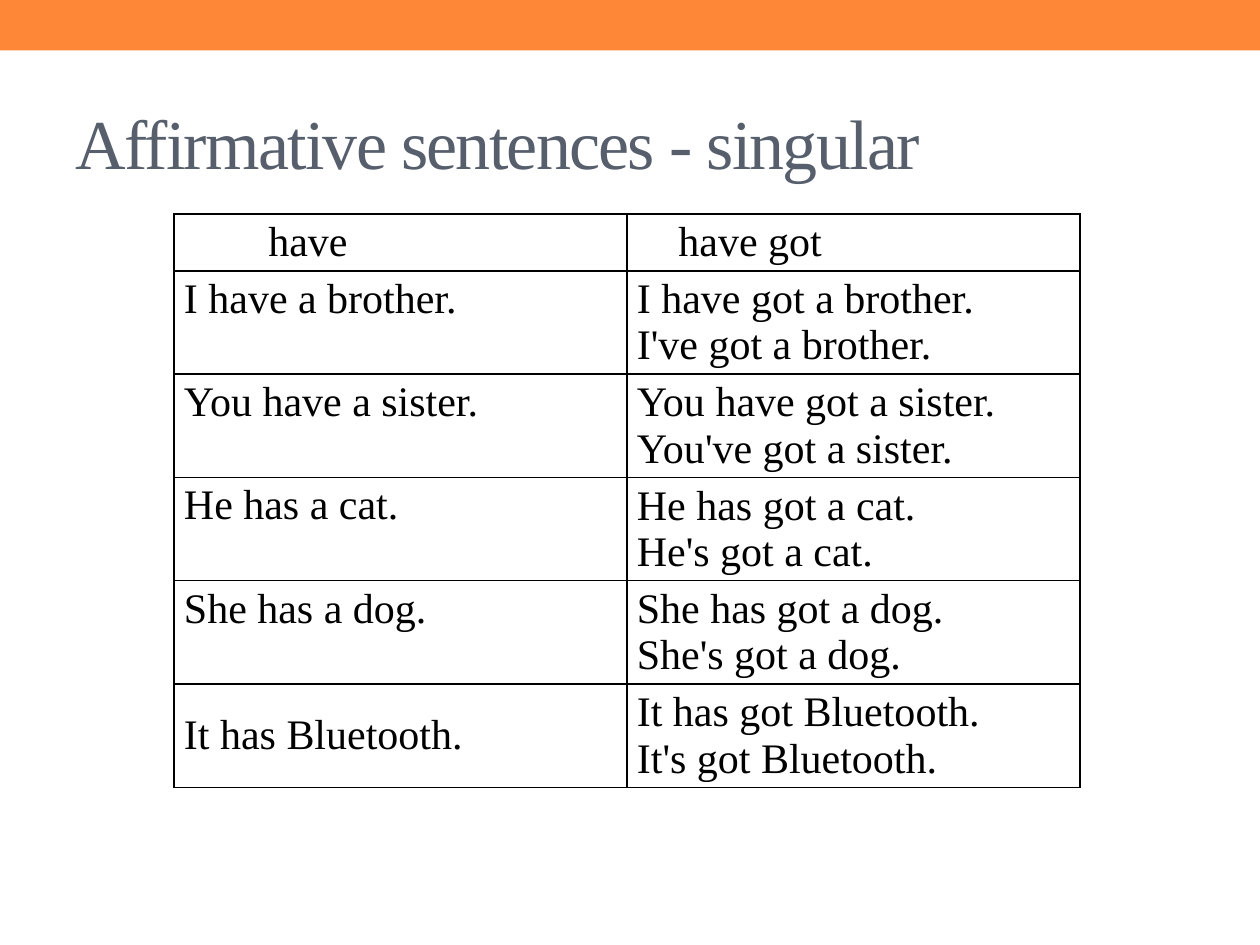
"""Build a slide comparing 'have' and 'have got' in singular affirmative sentences."""
from lxml import etree
from pptx import Presentation
from pptx.dml.color import RGBColor
from pptx.enum.shapes import MSO_SHAPE
from pptx.enum.text import MSO_ANCHOR, PP_ALIGN
from pptx.oxml.ns import qn
from pptx.util import Inches, Pt

RECT = MSO_SHAPE.RECTANGLE
TOP, MIDDLE = MSO_ANCHOR.TOP, MSO_ANCHOR.MIDDLE
LEFT = PP_ALIGN.LEFT
TITLE_ONLY = 5
FONT = "Times New Roman"
COLORS = {"band": "FE8637", "title": "575F6D", "text": "000000", "border": "000000"}
HEADERS = ["have", "have got"]
HEADER_INDENTS = [0.67, 0.33]
SENTENCES = [
    ("I have a brother.", "I have got a brother.\nI've got a brother."),
    ("You have a sister.", "You have got a sister.\nYou've got a sister."),
    ("He has a cat.", "He has got a cat.\nHe's got a cat."),
    ("She has a dog.", "She has got a dog.\nShe's got a dog."),
    ("It has Bluetooth.", "It has got Bluetooth.\nIt's got Bluetooth."),
]


def rgb(name):
    return RGBColor.from_string(COLORS[name])


def format_runs(p, size, color):
    for r in p.runs:
        r.font.name = FONT
        r.font.size = Pt(size)
        r.font.color.rgb = rgb(color)


def add_band(slide):
    sp = slide.shapes.add_shape(RECT, 0, 0, Inches(10), Inches(0.4))
    sp.shadow.inherit = False
    sp.fill.solid()
    sp.fill.fore_color.rgb = rgb("band")
    sp.line.fill.background()


def set_title(slide, text):
    sp = slide.shapes.title
    sp.left, sp.top, sp.width, sp.height = map(Inches, (0.5, 0.58, 9, 1.08))
    tf = sp.text_frame
    tf.vertical_anchor = MIDDLE
    p = tf.paragraphs[0]
    p.text = text
    p.alignment = LEFT
    format_runs(p, 40, "title")
    for r in p.runs:
        r.font._element.set("spc", "-100")


def set_borders(cell):
    tcPr = cell._tc.get_or_add_tcPr()
    for index, side in enumerate(("lnL", "lnR", "lnT", "lnB")):
        ln = etree.Element(qn(f"a:{side}"), w=str(Pt(1)))
        fill = etree.SubElement(ln, qn("a:solidFill"))
        etree.SubElement(fill, qn("a:srgbClr"), val=COLORS["border"])
        tcPr.insert(index, ln)


def fill_cell(cell, text, anchor=MIDDLE, indent=0):
    cell.margin_left = Inches(0.08 + indent)
    cell.margin_right = Inches(0.08)
    cell.margin_top = cell.margin_bottom = Inches(0.04)
    cell.vertical_anchor = anchor
    cell.fill.background()
    set_borders(cell)
    p = cell.text_frame.paragraphs[0]
    p.text = text.replace("\n", "\v")
    format_runs(p, 24, "text")


def add_sentence_table(slide):
    heights = [0.45] + [0.82] * len(SENTENCES)
    frame = slide.shapes.add_table(len(heights), len(HEADERS), Inches(1.38), Inches(1.7),
                                   Inches(7.19), Inches(sum(heights)))
    table = frame.table
    table.first_row = table.horz_banding = False
    for row, height in zip(table.rows, heights):
        row.height = Inches(height)
    for col, (text, indent) in enumerate(zip(HEADERS, HEADER_INDENTS)):
        fill_cell(table.cell(0, col), text, indent=indent)
    for row, (have, have_got) in enumerate(SENTENCES, start=1):
        anchor = MIDDLE if row == len(SENTENCES) else TOP
        fill_cell(table.cell(row, 0), have, anchor)
        fill_cell(table.cell(row, 1), have_got)


def main():
    prs = Presentation()
    prs.slide_width, prs.slide_height = Inches(10), Inches(7.5)
    slide = prs.slides.add_slide(prs.slide_layouts[TITLE_ONLY])
    add_band(slide)
    set_title(slide, "Affirmative sentences - singular")
    add_sentence_table(slide)
    prs.save("out.pptx")


if __name__ == "__main__":
    main()
